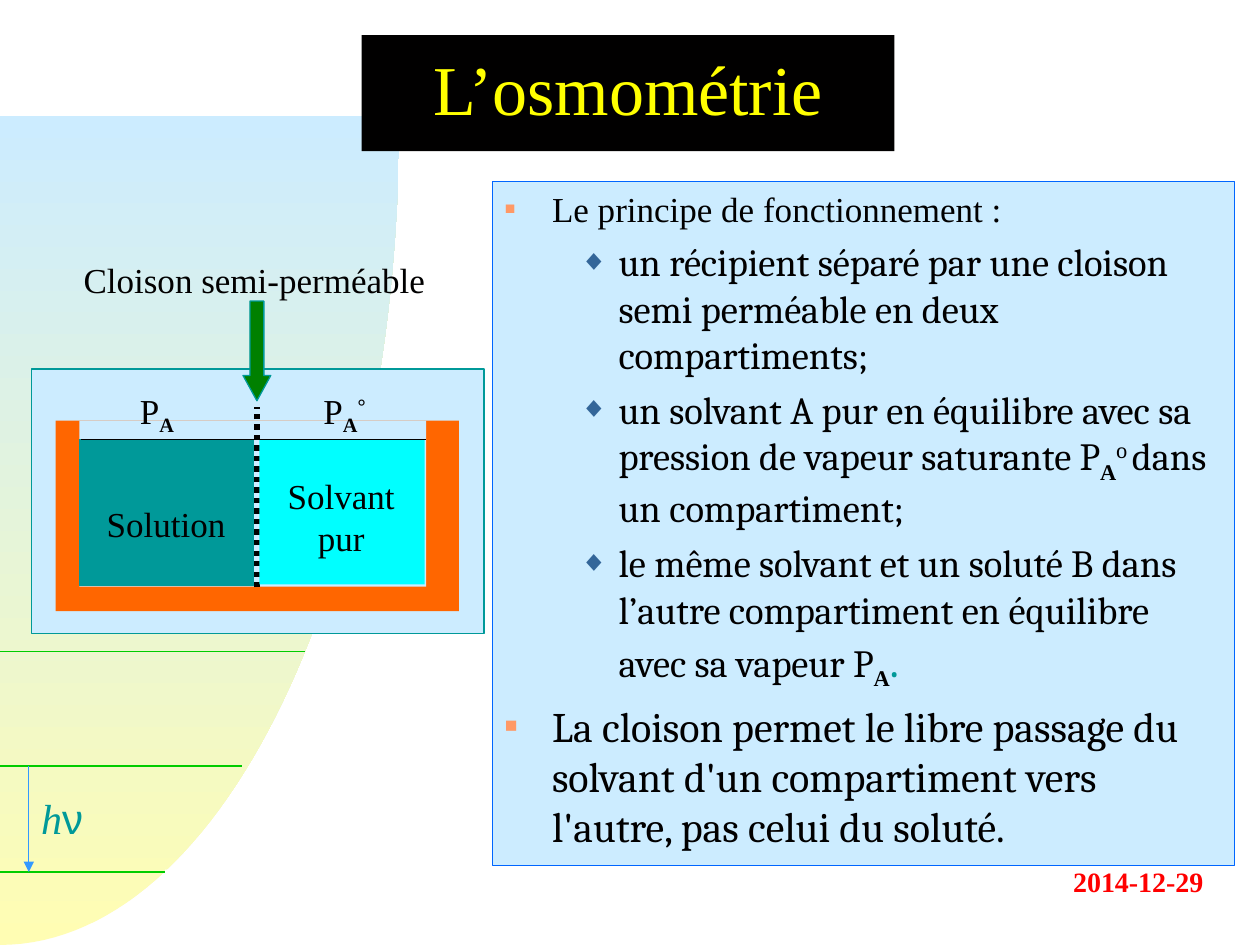
import pptx
import pptx.util
import pptx.dml.color
import pptx.enum.dml
import pptx.enum.shapes
import pptx.enum.text
import pptx.oxml
import pptx.oxml.ns
import lxml.etree

Cm = pptx.util.Cm
Pt = pptx.util.Pt
SHAPE = pptx.enum.shapes.MSO_SHAPE
ALIGN = pptx.enum.text.PP_ALIGN
ANCHOR = pptx.enum.text.MSO_ANCHOR

BLACK, TEAL, PALE, GREEN = "010000", "009999", "CCECFF", "00CC00"
TIMES = {"name": "Times New Roman", "size": 20, "color": BLACK}
CAMBRIA = {**TIMES, "name": "Cambria", "size": 22}
SUBSCRIPT = {**TIMES, "bold": True, "baseline": -25}
SUPERSCRIPT = {**SUBSCRIPT, "baseline": 30}


def hex_color(value):
    return pptx.dml.color.RGBColor.from_string(value)


def add_child(parent, tag, **attributes):
    child = lxml.etree.SubElement(parent, pptx.oxml.ns.qn(tag))
    for key, value in attributes.items():
        child.set(key, str(value))
    return child


class SlideBuilder:
    bullets = {
        0: {"char": "■", "color": "FF9966", "size": 50, "margin": 0.95, "hanging": 0.95},
        1: {"char": "◆", "color": "336699", "size": 75, "margin": 2.29, "hanging": 0.79},
    }

    def __init__(self, presentation):
        self.slide = presentation.slides.add_slide(presentation.slide_layouts[6])
        self.shapes = self.slide.shapes

    def paint(self, shape, fill, line):
        shape.shadow.inherit = False
        if fill:
            shape.fill.solid()
            shape.fill.fore_color.rgb = hex_color(fill)
        if line:
            shape.line.color.rgb = hex_color(line)
            shape.line.width = Pt(0.75)
        else:
            shape.line.fill.background()

    def box(self, left, top, width, height, fill, line=None, kind=SHAPE.RECTANGLE):
        shape = self.shapes.add_shape(kind, Cm(left), Cm(top), Cm(width), Cm(height))
        self.paint(shape, fill, line)
        return shape

    def line(self, start, end, color, width=0.75, dash=None, arrow=False):
        connector = self.shapes.add_connector(
            pptx.enum.shapes.MSO_CONNECTOR.STRAIGHT, *map(Cm, start + end))
        connector.line.color.rgb = hex_color(color)
        connector.line.width = Pt(width)
        if dash:
            connector.line.dash_style = dash
        if arrow:
            add_child(connector.line._get_or_add_ln(), "a:tailEnd", type="triangle")
        add_child(connector._element.spPr, "a:effectLst")
        return connector

    def gradient_curve(self, controls, top, low_color, high_color, steps=60):
        points = []
        for step in range(steps + 1):
            t = step / steps
            weights = ((1 - t) ** 3, 3 * t * (1 - t) ** 2, 3 * t * t * (1 - t), t ** 3)
            points.append(tuple(
                Cm(sum(weight * point[axis] for weight, point in zip(weights, controls)))
                for axis in (0, 1)))
        builder = self.shapes.build_freeform(*points[0], scale=1.0)
        builder.add_line_segments(points[1:] + [(0, Cm(top))], close=True)
        shape = builder.convert_to_shape()
        self.paint(shape, None, None)
        shape.fill.gradient()
        shape.fill.gradient_angle = 90
        for stop, color, position in zip(
                shape.fill.gradient_stops, (low_color, high_color), (0, 1)):
            stop.color.rgb = hex_color(color)
            stop.position = position

    def add_runs(self, paragraph, runs):
        for text, style in runs:
            run = paragraph.add_run()
            run.text = text
            for key, value in style.items():
                if key == "color":
                    run.font.color.rgb = hex_color(value)
                elif key == "baseline":
                    run._r.get_or_add_rPr().set("baseline", str(value * 1000))
                else:
                    setattr(run.font, key, Pt(value) if key == "size" else value)

    def label(self, left, top, width, height, runs, alignment=ALIGN.LEFT):
        shape = self.shapes.add_textbox(Cm(left), Cm(top), Cm(width), Cm(height))
        shape.text_frame.word_wrap = True
        paragraph = shape.text_frame.paragraphs[0]
        paragraph.alignment = alignment
        self.add_runs(paragraph, runs)

    def title(self, shape, runs):
        shape.text_frame.vertical_anchor = ANCHOR.MIDDLE
        paragraph = shape.text_frame.paragraphs[0]
        paragraph.alignment = ALIGN.CENTER
        paragraph.line_spacing = 0.9
        self.add_runs(paragraph, runs)

    def bullet_list(self, shape, items):
        frame = shape.text_frame
        frame.word_wrap = True
        frame.vertical_anchor = ANCHOR.TOP
        for index, (level, runs) in enumerate(items):
            paragraph = frame.add_paragraph() if index else frame.paragraphs[0]
            paragraph.level = level
            paragraph.alignment = ALIGN.LEFT
            if index:
                paragraph.space_before = Pt(5)
            bullet = self.bullets[level]
            properties = paragraph._p.get_or_add_pPr()
            properties.set("marL", str(Cm(bullet["margin"])))
            properties.set("indent", str(-Cm(bullet["hanging"])))
            add_child(add_child(properties, "a:buClr"), "a:srgbClr", val=bullet["color"])
            add_child(properties, "a:buSzPct", val=bullet["size"] * 1000)
            add_child(properties, "a:buFont", typeface="Arial")
            add_child(properties, "a:buChar", char=bullet["char"])
            self.add_runs(paragraph, runs)


def main():
    presentation = pptx.Presentation()
    presentation.slide_width, presentation.slide_height = Cm(25.4), Cm(19.05)
    builder = SlideBuilder(presentation)

    builder.gradient_curve(
        [(0, 19.05), (4.45, 19.05), (8.05, 11.58), (8.05, 2.34)], 2.34, "FFFDB3", PALE)
    for level, end in ((17.58, 3.38), (15.44, 4.88), (13.13, 6.15)):
        builder.line((0, level), (end, level), GREEN)
    builder.line((0.58, 15.44), (0.58, 17.58), "3399FF", arrow=True)
    symbol = {"size": 24, "color": TEAL}
    builder.label(0.58, 15.85, 1.45, 1.27, [
        ("h", {**symbol, "name": "Times New Roman", "italic": True}),
        ("ν", {**symbol, "name": "Arial"})])
    builder.label(19.63, 17.3, 4.88, 0.94, [
        ("2014-12-29", {**TIMES, "size": 16, "color": "FF0000", "bold": True})], ALIGN.RIGHT)
    builder.box(3.33, 17.53, 4.78, 0.94, "FFFFFF")

    builder.title(builder.box(7.29, 0.71, 10.74, 2.34, BLACK), [
        ("L’osmométrie", {**TIMES, "size": 40, "color": "FFFF00"})])
    builder.bullet_list(builder.box(9.93, 3.66, 14.96, 13.79, PALE, "0066FF"), [
        (0, [("Le principe de fonctionnement :", TIMES)]),
        (1, [("un récipient séparé par une cloison semi perméable en deux compartiments;",
              CAMBRIA)]),
        (1, [("un solvant A pur en équilibre avec sa pression de vapeur saturante P", CAMBRIA),
             ("A", {**SUBSCRIPT, "size": 22}),
             ("o ", {**CAMBRIA, "baseline": 30}),
             ("dans un compartiment;", CAMBRIA)]),
        (1, [("le même solvant et un soluté B dans l’autre compartiment en équilibre "
              "avec sa vapeur P", CAMBRIA),
             ("A", {**SUBSCRIPT, "size": 22}),
             (".", {**CAMBRIA, "size": 26, "color": TEAL})]),
        (0, [("La cloison permet le libre passage du solvant d'un compartiment vers "
              "l'autre, pas celui du soluté.", {**CAMBRIA, "size": 24})]),
    ])

    apparatus = [
        builder.box(0.64, 7.44, 9.12, 5.33, PALE, TEAL),
        builder.box(1.12, 8.48, 8.13, 3.84, "FF6600"),
        builder.box(1.6, 8.48, 6.99, 3.35, PALE),
        builder.line((5.18, 11.84), (5.18, 8.2), BLACK, 3, pptx.enum.dml.MSO_LINE.ROUND_DOT),
        builder.box(1.6, 8.86, 3.51, 2.95, TEAL, TEAL),
        builder.box(5.23, 8.86, 3.33, 2.92, "00FFFF"),
        builder.line((1.63, 8.86), (8.59, 8.86), BLACK),
    ]
    builder.shapes.add_group_shape(apparatus)

    pressure = [("P", TIMES), ("A", SUBSCRIPT)]
    builder.label(5.38, 9.45, 3, 1.96, [("Solvant pur", TIMES)], ALIGN.CENTER)
    builder.label(1.85, 10.01, 3, 1.09, [("Solution", TIMES)], ALIGN.CENTER)
    builder.label(2.57, 7.72, 1.55, 1.09, pressure)
    builder.label(6.27, 7.72, 1.55, 1.09, pressure + [("°", SUPERSCRIPT)])
    builder.label(1.27, 5.08, 7.72, 1.09, [("Cloison semi-perméable", TIMES)], ALIGN.CENTER)
    arrow = builder.box(4.9, 6.07, 0.56, 2.01, "008000", TEAL, SHAPE.DOWN_ARROW)
    arrow.adjustments[0], arrow.adjustments[1] = 0.5, 0.91

    presentation.save("out.pptx")


if __name__ == "__main__":
    main()
